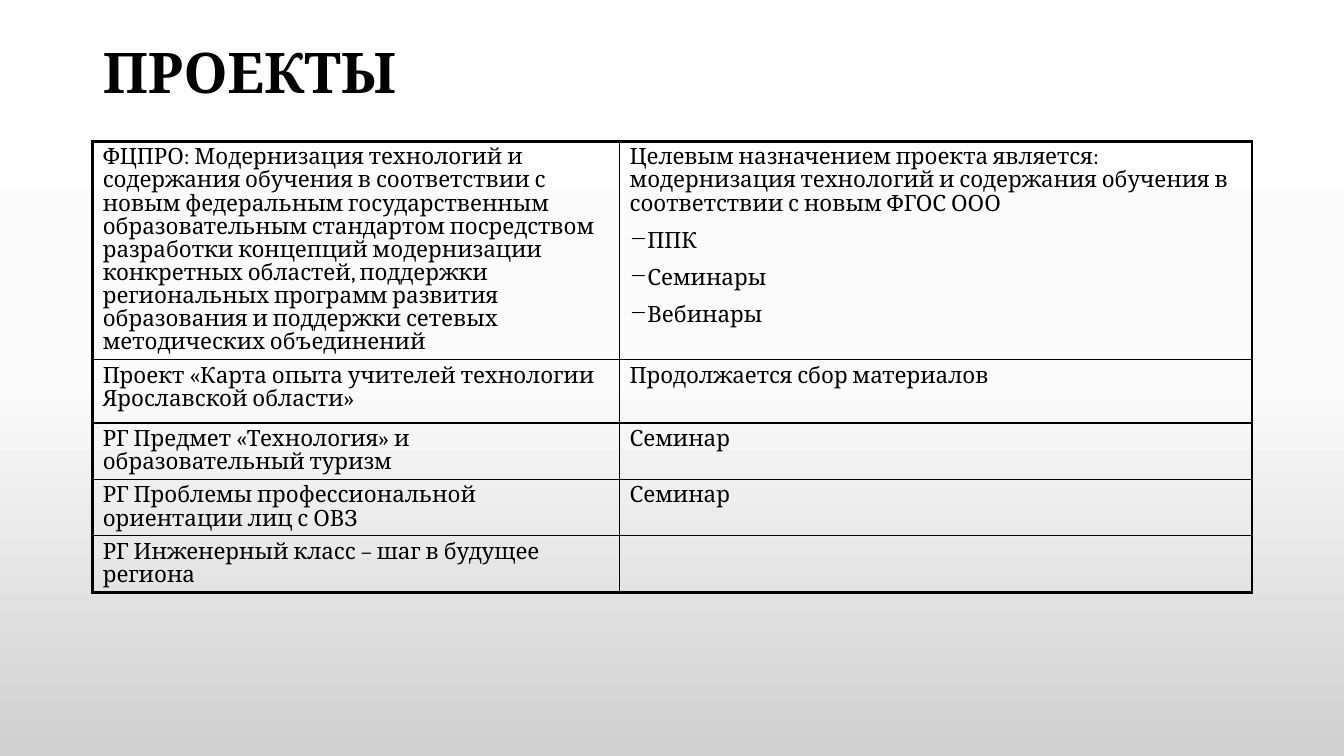
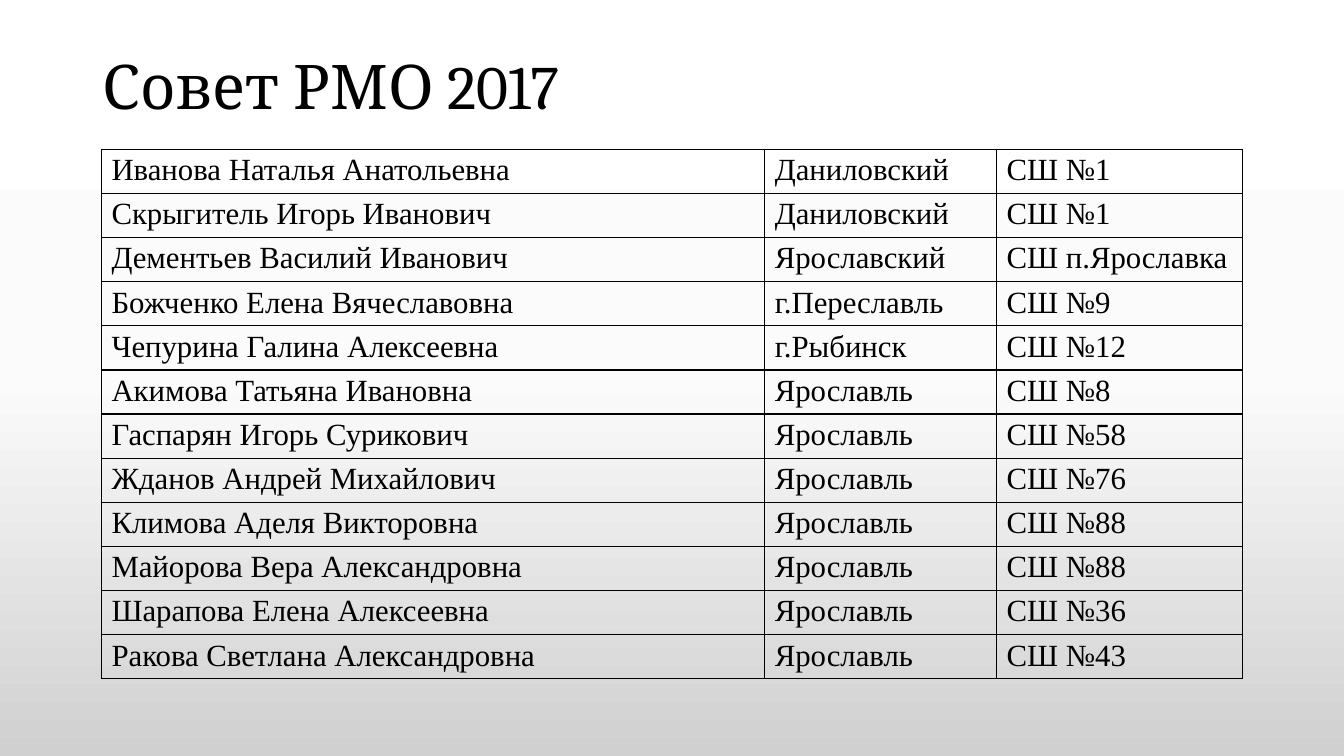
import copy

import pptx
import pptx.dml.color
import pptx.enum.text
import pptx.oxml
import pptx.oxml.ns
import pptx.util

Pt = pptx.util.Pt
Inches = pptx.util.Inches
ANCHOR = pptx.enum.text.MSO_ANCHOR
INK = "000000"
DASH = "−"
SKY = ((0, "FFFFFF"), (0.5, "FBFBFB"), (1, "D0D0D0"))
HEAD = {"line_spacing": 0.9, "alignment": pptx.enum.text.PP_ALIGN.LEFT}
BODY = {"line_spacing": 0.9, "space_before": Pt(10)}


def tint(code):
    return pptx.dml.color.RGBColor.from_string(code)


def put(item, form):
    for name, value in form.items():
        setattr(item, name, value)


class Deck:
    def __init__(self):
        self.show = pptx.Presentation()
        put(self.show, {"slide_width": Inches(13.33), "slide_height": Inches(7.5)})
        self.slide = None
        self.sky()

    def wide(self, share):
        return round(self.show.slide_width * share / 100)

    def high(self, share):
        return round(self.show.slide_height * share / 100)

    def area(self, left, top, width, height):
        return self.wide(left), self.high(top), self.wide(width), self.high(height)

    def sky(self):
        fill = self.show.slide_master.background.fill
        fill.gradient()
        fill.gradient_angle = 270
        last = fill.gradient_stops[-1]._gs
        last.addnext(copy.deepcopy(last))
        for stop, (place, code) in zip(fill.gradient_stops, SKY):
            stop.position = place
            stop.color.rgb = tint(code)

    def line(self, para, text, font, form):
        put(para, form)
        run = para.add_run()
        run.text = text
        put(run.font, font)
        run.font.color.rgb = tint(INK)

    def page(self, text, box, font, anchor):
        self.slide = self.show.slides.add_slide(self.show.slide_layouts[5])
        title = self.slide.shapes.title
        names = ("left", "top", "width", "height")
        put(title, dict(zip(names, self.area(*box))))
        put(title.text_frame, {
            "vertical_anchor": anchor, "word_wrap": True,
            "auto_size": pptx.enum.text.MSO_AUTO_SIZE.NONE})
        self.line(title.text_frame.paragraphs[0], text, font, HEAD)

    def edge(self, cell, side, width):
        cell._tc.get_or_add_tcPr().append(pptx.oxml.parse_xml(
            f'<a:ln{side} {pptx.oxml.ns.nsdecls("a")} w="{Pt(width)}">'
            f'<a:solidFill><a:srgbClr val="{INK}"/></a:solidFill></a:ln{side}>'))

    def bullet(self, para):
        props = para._p.get_or_add_pPr()
        props.set("marL", "0")
        props.set("indent", "0")
        props.append(pptx.oxml.parse_xml(
            f'<a:buChar {pptx.oxml.ns.nsdecls("a")} char="{DASH}"/>'))

    def fill(self, cell, text, font, form):
        frame = cell.text_frame
        for spot, words in enumerate(text.split("\n") if text else ()):
            para = frame.add_paragraph() if spot else frame.paragraphs[0]
            self.line(para, words.removeprefix(DASH), font, form)
            if words.startswith(DASH):
                self.bullet(para)

    def table(self, spot, cols, rows, data, font, form, rim, pad):
        box = self.area(*spot, sum(cols), sum(rows))
        grid = self.slide.shapes.add_table(len(rows), len(cols), *box).table
        put(grid, {"first_row": False, "horz_banding": False})
        for col, share in zip(grid.columns, cols):
            col.width = self.wide(share)
        for row, share in zip(grid.rows, rows):
            row.height = self.high(share)
        for y, texts in enumerate(data):
            for x, text in enumerate(texts):
                cell = grid.cell(y, x)
                put(cell, {"margin_top": Inches(pad), "margin_bottom": Inches(pad)})
                outer = {"L": x == 0, "R": x == len(cols) - 1,
                         "T": y == 0, "B": y == len(rows) - 1}
                for side, rims in outer.items():
                    self.edge(cell, side, rim if rims else 1)
                cell.fill.background()
                self.fill(cell, text, font, form)


WORKS = (
    ("ФЦПРО: Модернизация технологий и содержания обучения в соответствии с новым "
     "федеральным государственным образовательным стандартом посредством разработки "
     "концепций модернизации конкретных областей, поддержки региональных программ "
     "развития образования и поддержки сетевых методических объединений",
     "Целевым назначением проекта является: модернизация технологий и содержания "
     "обучения в соответствии с новым ФГОС ООО\n−ППК\n−Семинары\n−Вебинары"),
    ("Проект «Карта опыта учителей технологии Ярославской области»",
     "Продолжается сбор материалов"),
    ("РГ Предмет «Технология» и образовательный туризм", "Семинар"),
    ("РГ Проблемы профессиональной ориентации лиц с ОВЗ", "Семинар"),
    ("РГ Инженерный класс – шаг в будущее региона", ""),
)
BOARD = (
    ("Иванова Наталья Анатольевна", "Даниловский", "СШ №1"),
    ("Скрыгитель Игорь Иванович", "Даниловский", "СШ №1"),
    ("Дементьев Василий Иванович", "Ярославский", "СШ п.Ярославка"),
    ("Божченко Елена Вячеславовна", "г.Переславль", "СШ №9"),
    ("Чепурина Галина Алексеевна", "г.Рыбинск", "СШ №12"),
    ("Акимова Татьяна Ивановна", "Ярославль", "СШ №8"),
    ("Гаспарян Игорь Сурикович", "Ярославль", "СШ №58"),
    ("Жданов Андрей Михайлович", "Ярославль", "СШ №76"),
    ("Климова Аделя Викторовна", "Ярославль", "СШ №88"),
    ("Майорова Вера Александровна", "Ярославль", "СШ №88"),
    ("Шарапова Елена Алексеевна", "Ярославль", "СШ №36"),
    ("Ракова Светлана Александровна", "Ярославль", "СШ №43"),
)


def main():
    deck = Deck()
    deck.page("ПРОЕКТЫ", (6.9, 5.33, 86.25, 19.33),
              {"name": "Cambria", "size": Pt(40), "bold": True}, ANCHOR.TOP)
    deck.table((6.9, 18.67), (39.2, 47.05), (28.8, 8.4) + (7.45,) * 3, WORKS,
               {"name": "Cambria", "size": Pt(16)}, BODY, 2.25, 0.05)
    deck.page("Совет РМО 2017", (6.9, 5.33, 86.25, 13.07),
              {"name": "Cambria", "size": Pt(44)}, ANCHOR.MIDDLE)
    deck.table((7.55, 19.75), (49.35, 17.25, 18.3), (5.84,) * len(BOARD), BOARD,
               {"name": "Times New Roman", "size": Pt(22)}, {}, 1, 0.04)
    deck.show.save("out.pptx")


if __name__ == "__main__":
    main()
